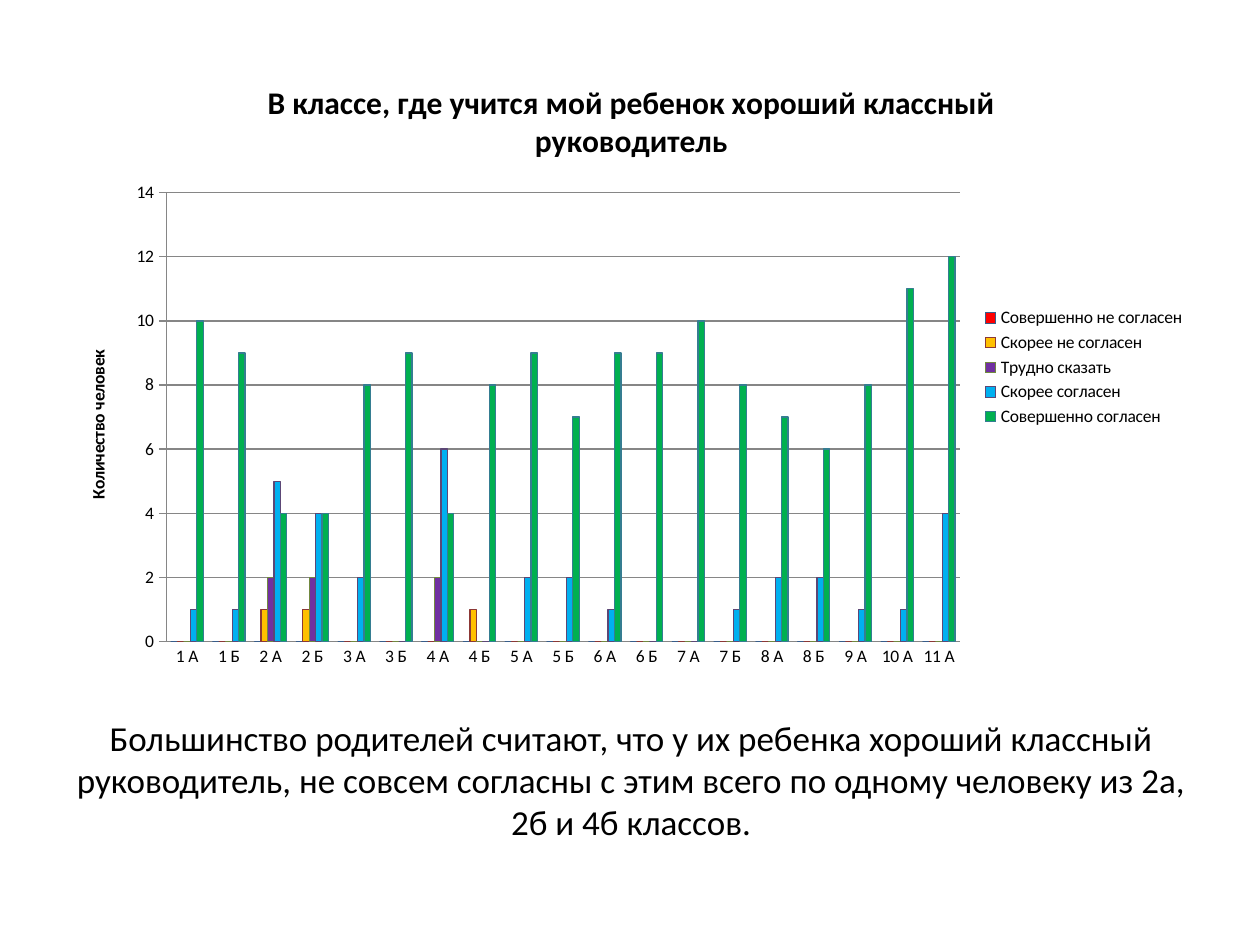
from lxml import etree
from pptx import Presentation
from pptx.chart.data import CategoryChartData
from pptx.dml.color import RGBColor
from pptx.enum import chart as ch, text
from pptx.oxml import ns
from pptx.util import Inches, Pt

FONT = "Calibri"
TITLE = "В классе, где учится мой ребенок хороший классный руководитель"
AXIS_TITLE = "Количество человек"
SUMMARY = ("Большинство родителей считают, что у их ребенка хороший классный "
           "руководитель, не совсем согласны с этим всего по одному человеку "
           "из 2а, 2б и 4б классов.")
CLASSES = ["1 А", "1 Б", "2 А", "2 Б", "3 А", "3 Б", "4 А", "4 Б", "5 А", "5 Б",
           "6 А", "6 Б", "7 А", "7 Б", "8 А", "8 Б", "9 А", "10 А", "11 А"]
ANSWERS = [
    ("Совершенно не согласен", "FF0000", "385D8A", [0] * 19),
    ("Скорее не согласен", "FFC000", "8C3836",
     [0, 0, 1, 1, 0, 0, 0, 1, 0, 0, 0, 0, 0, 0, 0, 0, 0, 0, 0]),
    ("Трудно сказать", "7030A0", "71893F",
     [0, 0, 2, 2, 0, 0, 2, 0, 0, 0, 0, 0, 0, 0, 0, 0, 0, 0, 0]),
    ("Скорее согласен", "00B0F0", "5C4776",
     [1, 1, 5, 4, 2, 0, 6, 0, 2, 2, 1, 0, 0, 1, 2, 2, 1, 1, 4]),
    ("Совершенно согласен", "00B050", "357D91",
     [10, 9, 4, 4, 8, 9, 4, 8, 9, 7, 9, 9, 10, 8, 7, 6, 8, 11, 12]),
]
PLOT_LAYOUT = [("layoutTarget", "inner"), ("xMode", "edge"), ("yMode", "edge"),
               ("x", 0.09), ("y", 0.22), ("w", 0.7), ("h", 0.72)]


def color(value):
    return RGBColor.from_string(value)


def add_run(p, content, size, bold=False):
    r = p.add_run()
    r.text = content
    style_font(r.font, size, bold)


def style_font(font, size, bold=False):
    font.name, font.size, font.bold = FONT, Pt(size), bold
    font.color.rgb = color("000000")


def style_line(line, value):
    line.color.rgb = color(value)
    line.width = Pt(0.75)


def set_plot_layout(chart):
    area = chart._chartSpace.chart.plotArea
    for old in area.findall(ns.qn("c:layout")):
        area.remove(old)
    layout = etree.Element(ns.qn("c:layout"))
    manual = etree.SubElement(layout, ns.qn("c:manualLayout"))
    for tag, value in PLOT_LAYOUT:
        etree.SubElement(manual, ns.qn(f"c:{tag}")).set("val", str(value))
    area.insert(0, layout)


def add_answers_chart(s):
    data = CategoryChartData()
    data.categories = CLASSES
    for name, _, _, values in ANSWERS:
        data.add_series(name, values)
    chart = s.shapes.add_chart(
        ch.XL_CHART_TYPE.COLUMN_CLUSTERED, Inches(0.51), Inches(0.44),
        Inches(9), Inches(4.95), data).chart
    style_font(chart.font, 10)
    chart.has_title = True
    add_run(chart.chart_title.text_frame.paragraphs[0], TITLE, 18, True)
    chart.chart_title.include_in_layout = False
    chart.has_legend = True
    chart.legend.position = ch.XL_LEGEND_POSITION.RIGHT
    chart.legend.include_in_layout = False

    plot = chart.plots[0]
    plot.gap_width = 150
    plot.overlap = 0
    plot.vary_by_categories = False
    for series, (_, fill, outline, _) in zip(plot.series, ANSWERS):
        series.format.fill.solid()
        series.format.fill.fore_color.rgb = color(fill)
        style_line(series.format.line, outline)

    cats, vals = chart.category_axis, chart.value_axis
    cats.major_tick_mark = ch.XL_TICK_MARK.NONE
    vals.major_tick_mark = ch.XL_TICK_MARK.OUTSIDE
    vals.minimum_scale, vals.maximum_scale, vals.major_unit = 0, 14, 2
    vals.has_major_gridlines = True
    for line in (cats.format.line, vals.format.line,
                 vals.major_gridlines.format.line):
        style_line(line, "868686")
    vals.has_title = True
    add_run(vals.axis_title.text_frame.paragraphs[0], AXIS_TITLE, 10, True)
    set_plot_layout(chart)


def add_summary(s):
    tf = s.shapes.add_textbox(Inches(0.51), Inches(5.56),
                              Inches(9), Inches(1.25)).text_frame
    tf.word_wrap = True
    tf.vertical_anchor = text.MSO_ANCHOR.MIDDLE
    p = tf.paragraphs[0]
    p.alignment = text.PP_ALIGN.CENTER
    add_run(p, SUMMARY, 20)


def main():
    prs = Presentation()
    prs.slide_width, prs.slide_height = Inches(10), Inches(7.5)
    s = prs.slides.add_slide(prs.slide_layouts[6])
    add_summary(s)
    add_answers_chart(s)
    prs.save("out.pptx")


if __name__ == "__main__":
    main()
